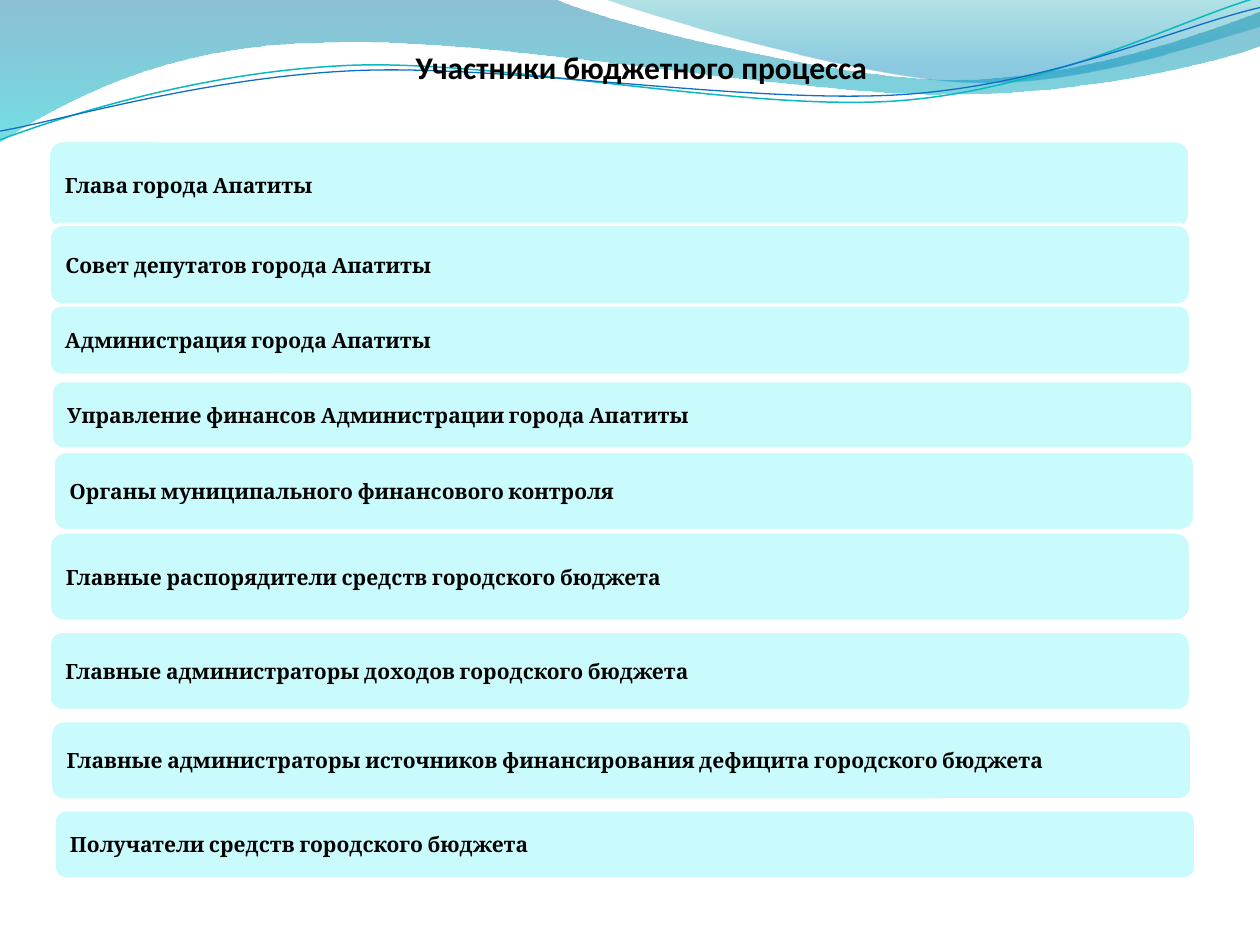
from lxml.etree import SubElement
from pptx import Presentation
from pptx.dml.color import RGBColor
from pptx.enum.shapes import MSO_SHAPE
from pptx.enum.text import MSO_ANCHOR as Anchor, PP_ALIGN as Align
from pptx.oxml.ns import qn
from pptx.util import Pt

COLORS = {
    "text": "000000", "row": "C9FAFC", "row_line": "FFFFFF",
    "wave_top": "0074A1", "wave_bottom": "00C6CF",
    "veil_top": "00A1A9", "veil_bottom": "008BBF",
    "teal_line": "0AB8BF", "blue_line": "0F6FC6",
}
ROW_WIDTH = 652.3

# Outlines: a start point, then segments of one point (line) or three (cubic curve)
WAVE = ((0, -0.7), [
    [(316.8, -0.7)],
    [(342.7, 12.2), (478.1, 45.4), (545.8, 45.4)],
    [(614.2, 45.4), (689.8, 18.7), (720, 6.5)],
    [(720.7, 25.9)],
    [(707.8, 31.7), (626.4, 54.7), (537.1, 54)],
    [(447.8, 54), (275, 20.2), (185, 24.5)],
    [(92.9, 25.2), (33.1, 59.8), (-0.7, 81.4)],
    [(0, -0.7)],
])
VEIL = ((344.9, -0.7), [
    [(366.5, 7.9), (491, 44.6), (553.7, 46.8)],
    [(616.3, 49.7), (691.9, 23), (720, 15.1)],
    [(720, 0)],
    [(344.9, -0.7)],
])
TEAL_CURVE = ((0, 79.9), [
    [(34.6, 67), (113.8, 41), (199.4, 37.4)],
    [(284.4, 33.8), (427, 64.1), (513.4, 57.6)],
    [(599.8, 51.1), (675.4, 10.8), (718.6, -1.4)],
])
BLUE_CURVE = ((0, 74.9), [
    [(33.8, 69.1), (118.1, 43.9), (203.8, 40.3)],
    [(290.2, 36.7), (429.8, 59.8), (516.2, 54)],
    [(601.9, 48.2), (673.2, 15.1), (720, 4.3)],
])

# Participants: left, top, height, wording
PARTICIPANTS = [
    (27.6, 80.3, 50.6, "Глава города Апатиты"),
    (28.1, 128.2, 46.1, "Совет депутатов города Апатиты"),
    (28.1, 174.2, 40.3, "Администрация города Апатиты"),
    (29.4, 217.6, 38.9, "Управление финансов Администрации города Апатиты"),
    (28.1, 304, 51.1, "Главные распорядители средств городского бюджета"),
    (28.1, 360.7, 45.4, "Главные администраторы доходов городского бюджета"),
    (28.8, 411.8, 45.4, "Главные администраторы источников финансирования "
                        "дефицита городского бюджета"),
    (31, 462.7, 39.6, "Получатели средств городского бюджета"),
    (30.4, 257.8, 45.4, "Органы муниципального финансового контроля"),
]


def rgb(name):
    return RGBColor.from_string(COLORS[name])


class SlideBuilder:
    def __init__(self, slide):
        self.slide = slide
        self.master_tree = slide.slide_layout.slide_master.shapes.element

    def format_text(self, frame, text, font_name, size, align, anchor):
        frame.text = text
        frame.word_wrap = True
        frame.vertical_anchor = anchor
        paragraph = frame.paragraphs[0]
        paragraph.alignment = align
        font = paragraph.runs[0].font
        font.name, font.size, font.bold = font_name, Pt(size), True
        font.color.rgb = rgb("text")

    def outline(self, outline, close):
        """Draw a curved outline and place it on the slide master."""
        start, segments = outline
        builder = self.slide.shapes.build_freeform(Pt(start[0]), Pt(start[1]))
        ends = [segment[-1] for segment in segments]
        builder.add_line_segments([(Pt(x), Pt(y)) for x, y in ends], close=close)
        shape = builder.convert_to_shape()
        shape.shadow.inherit = False

        # Turn the segments with control points into cubic curves
        for line, segment in zip(list(shape.element.iter(qn("a:lnTo"))), segments):
            if len(segment) == 3:
                line.tag = qn("a:cubicBezTo")
                end = line[0]
                for x, y in segment[:2]:
                    control = SubElement(line, qn("a:pt"))
                    control.set("x", str(Pt(x) - shape.left))
                    control.set("y", str(Pt(y) - shape.top))
                line.append(end)

        shape.element.nvSpPr.cNvPr.set("id", str(100 + len(self.master_tree)))
        self.master_tree.append(shape.element)
        return shape

    def gradient_area(self, outline, stops):
        shape = self.outline(outline, True)
        shape.line.fill.background()
        shape.fill.gradient()
        shape.fill.gradient_angle = 270
        elements = shape.element.spPr.iter(qn("a:gs"))
        for stop, element, (position, color, opacity) in zip(
                shape.fill.gradient_stops, elements, stops):
            stop.position = position
            stop.color.rgb = rgb(color)
            SubElement(element[0], qn("a:alpha")).set("val", str(opacity * 1000))

    def curve(self, outline, color, width):
        shape = self.outline(outline, False)
        shape.fill.background()
        shape.line.color.rgb = rgb(color)
        shape.line.width = Pt(width)

    def title(self, text, left, top, width, height):
        shape = self.slide.shapes.title
        shape.left, shape.top, shape.width, shape.height = map(Pt, (left, top, width, height))
        frame = shape.text_frame
        self.format_text(frame, text, "Calibri", 18, Align.CENTER, Anchor.BOTTOM)
        frame.margin_left = frame.margin_right = frame.margin_bottom = 0
        frame.margin_top = Pt(3.6)

    def row(self, left, top, height, text):
        shape = self.slide.shapes.add_shape(
            MSO_SHAPE.ROUNDED_RECTANGLE, Pt(left), Pt(top), Pt(ROW_WIDTH), Pt(height))
        shape.shadow.inherit = False
        shape.fill.solid()
        shape.fill.fore_color.rgb = rgb("row")
        shape.line.color.rgb = rgb("row_line")
        shape.line.width = Pt(2)
        self.format_text(shape.text_frame, text, "Cambria", 12, Align.JUSTIFY, Anchor.MIDDLE)


def main():
    presentation = Presentation()
    presentation.slide_width, presentation.slide_height = Pt(720), Pt(540)
    builder = SlideBuilder(presentation.slides.add_slide(presentation.slide_layouts[5]))

    # Waves along the top
    builder.gradient_area(WAVE, [(0, "wave_top", 45), (1, "wave_bottom", 55)])
    builder.gradient_area(VEIL, [(0, "veil_top", 30), (0.8, "veil_bottom", 45)])
    builder.curve(TEAL_CURVE, "teal_line", 0.85)
    builder.curve(BLUE_CURVE, "blue_line", 0.75)

    # Title and participants
    builder.title("Участники бюджетного процесса", 42.5, 9.4, 648, 39.6)
    for participant in PARTICIPANTS:
        builder.row(*participant)

    presentation.save("out.pptx")


if __name__ == "__main__":
    main()
